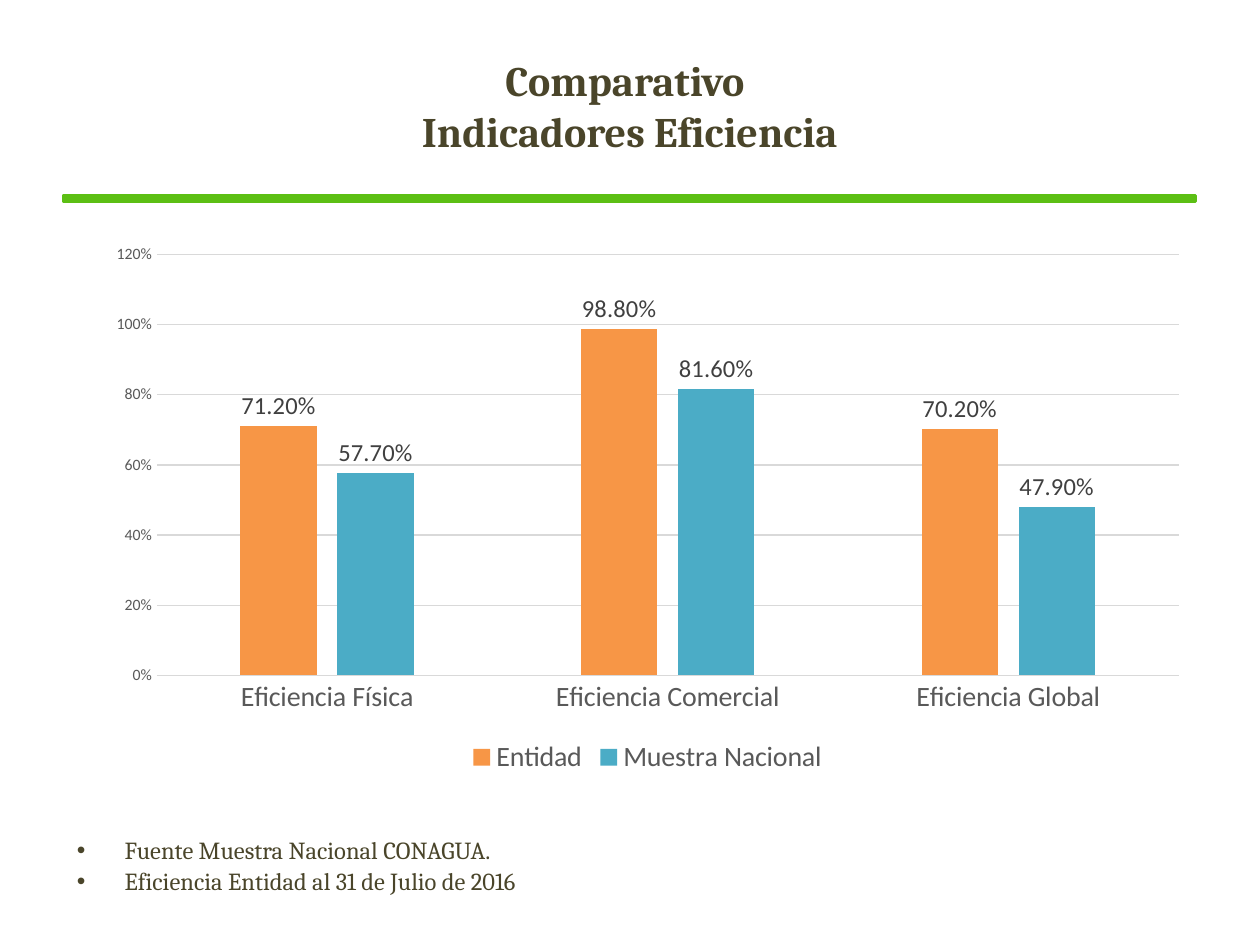
from lxml import etree
from pptx import Presentation
from pptx.chart.data import CategoryChartData
from pptx.dml.color import RGBColor
from pptx.enum.chart import XL_CHART_TYPE as ChartType
from pptx.enum.chart import XL_LABEL_POSITION as LabelPosition
from pptx.enum.chart import XL_LEGEND_POSITION as LegendPosition
from pptx.enum.chart import XL_TICK_MARK as TickMark
from pptx.enum.shapes import MSO_SHAPE as Shape
from pptx.enum.text import MSO_ANCHOR as Anchor
from pptx.enum.text import MSO_AUTO_SIZE as AutoSize
from pptx.enum.text import PP_ALIGN as Align
from pptx.oxml.ns import qn
from pptx.util import Inches, Pt

OLIVE, GREEN = "4A452A", "5CBF14"
GRID_GRAY, AXIS_GRAY, LABEL_GRAY = "D9D9D9", "595959", "404040"

CATEGORIES = ["Eficiencia Física", "Eficiencia Comercial", "Eficiencia Global"]
SERIES = [
    ("Entidad", [0.712, 0.988, 0.702], "F79646"),
    ("Muestra Nacional", [0.577, 0.816, 0.479], "4BACC6"),
]
SOURCES = ["Fuente Muestra Nacional CONAGUA.", "Eficiencia Entidad al 31 de Julio de 2016"]


def rgb(value):
    return RGBColor.from_string(value)


def place(shape, left, top, width, height):
    shape.left, shape.top = Inches(left), Inches(top)
    shape.width, shape.height = Inches(width), Inches(height)


def style(font, size, color, name="Calibri", bold=False):
    font.size, font.name, font.bold = Pt(size), name, bold
    font.color.rgb = rgb(color)


def style_line(line, color, width):
    line.color.rgb = rgb(color)
    line.width = Pt(width)


def add_rule(slide):
    """Draw the green band under the title."""
    rule = slide.shapes.add_shape(
        Shape.RECTANGLE, Inches(0.51), Inches(1.55), Inches(8.98), Inches(0.05))
    rule.shadow.inherit = False
    rule.fill.solid()
    rule.fill.fore_color.rgb = rgb(GREEN)
    style_line(rule.line, GREEN, 2)


def fill_title(title):
    place(title, 0.75, 0.21, 8.42, 1.25)
    frame = title.text_frame
    frame.text = "Comparativo\v Indicadores Eficiencia"
    frame.auto_size = AutoSize.NONE
    frame.vertical_anchor = Anchor.MIDDLE
    heading = frame.paragraphs[0]
    heading.alignment = Align.CENTER
    for run in heading.runs:
        style(run.font, 24, OLIVE, "Cambria", bold=True)


def add_bullet(paragraph, indent):
    properties = paragraph._p.get_or_add_pPr()
    properties.set("marL", str(Inches(indent)))
    properties.set("indent", str(-Inches(indent)))
    etree.SubElement(properties, qn("a:buChar")).set("char", "•")


def fill_sources(body):
    place(body, 0.51, 6.6, 9.02, 1.09)
    frame = body.text_frame
    frame.text = "\n".join(SOURCES)
    frame.auto_size = AutoSize.NONE
    for position, paragraph in enumerate(frame.paragraphs):
        add_bullet(paragraph, 0.38)
        paragraph.line_spacing = 0.9
        paragraph.space_before = Pt(2.8 if position else 0)
        for run in paragraph.runs:
            style(run.font, 14, OLIVE, "Cambria")


def format_axes(chart):
    categories, values = chart.category_axis, chart.value_axis
    for axis, size in ((categories, 16), (values, 9)):
        axis.major_tick_mark = axis.minor_tick_mark = TickMark.NONE
        style(axis.tick_labels.font, size, AXIS_GRAY)
    style_line(categories.format.line, GRID_GRAY, 0.75)
    values.format.line.fill.background()
    values.minimum_scale, values.maximum_scale, values.major_unit = 0, 1.2, 0.2
    values.tick_labels.number_format = "0%"
    values.tick_labels.number_format_is_linked = False
    style_line(values.major_gridlines.format.line, GRID_GRAY, 0.75)


def format_series(series, color):
    series.format.fill.solid()
    series.format.fill.fore_color.rgb = rgb(color)
    series.invert_if_negative = False
    labels = series.data_labels
    labels.show_value = True
    labels.position = LabelPosition.OUTSIDE_END
    labels.number_format = "0.00%"
    labels.number_format_is_linked = False
    style(labels.font, 14, LABEL_GRAY)


def add_efficiency_chart(slide):
    data = CategoryChartData(number_format="0.00%")
    data.categories = CATEGORIES
    for name, values, _ in SERIES:
        data.add_series(name, values)
    chart = slide.shapes.add_chart(
        ChartType.COLUMN_CLUSTERED, Inches(0.75), Inches(1.86),
        Inches(8.78), Inches(4.33), data).chart
    style(chart.font, 10, "000000")
    chart.has_title = False
    chart.has_legend = True
    chart.legend.position = LegendPosition.BOTTOM
    chart.legend.include_in_layout = False
    style(chart.legend.font, 16, AXIS_GRAY)
    format_axes(chart)
    plot = chart.plots[0]
    plot.gap_width, plot.overlap = 219, -27
    plot.vary_by_categories = False
    for series, (_, _, color) in zip(plot.series, SERIES):
        format_series(series, color)


def main():
    presentation = Presentation()
    presentation.slide_width, presentation.slide_height = Inches(10), Inches(7.5)
    slide = presentation.slides.add_slide(presentation.slide_layouts[1])
    add_rule(slide)
    fill_title(slide.shapes.title)
    fill_sources(slide.placeholders[1])
    add_efficiency_chart(slide)
    presentation.save("out.pptx")


if __name__ == "__main__":
    main()
